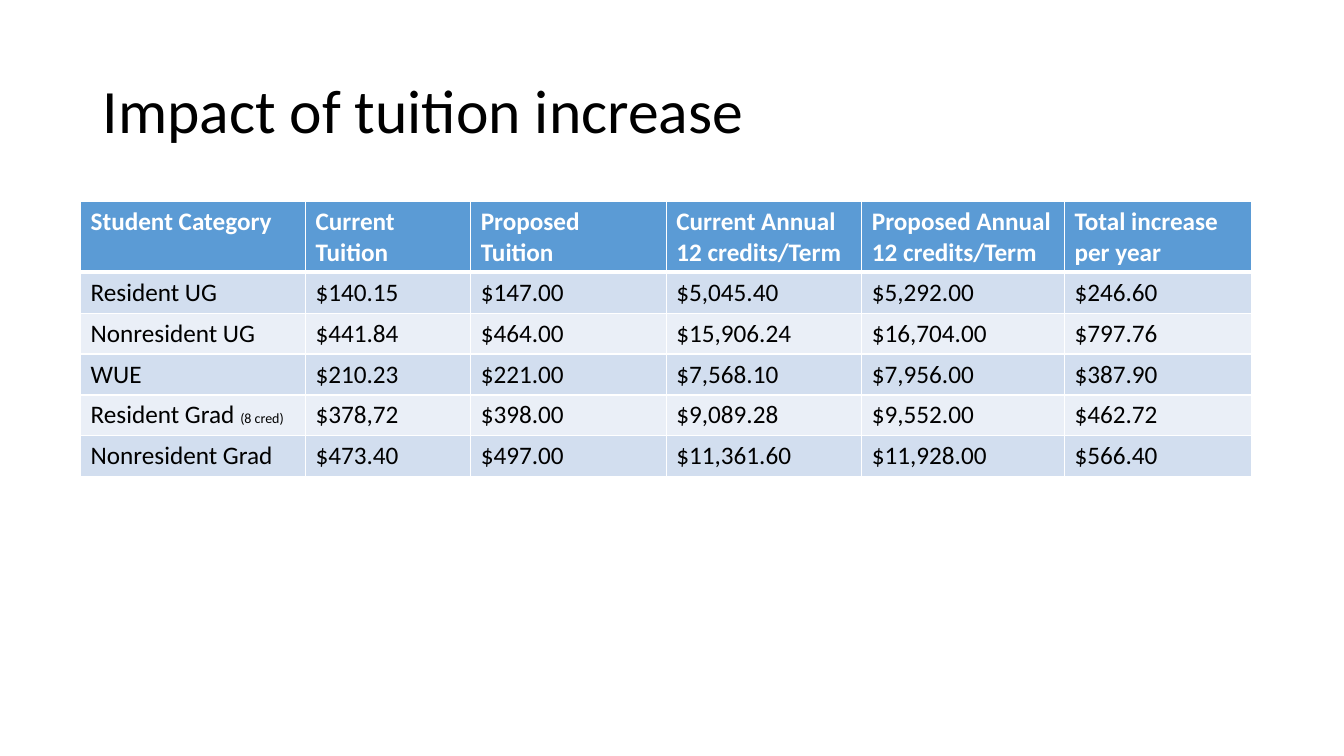
from dataclasses import dataclass

from lxml.etree import SubElement
from pptx import Presentation
from pptx.dml.color import RGBColor
from pptx.enum.text import MSO_ANCHOR
from pptx.oxml.ns import qn
from pptx.table import _Cell
from pptx.text.text import _Paragraph
from pptx.util import Inches, Pt

FONT = "Calibri"
BLACK = RGBColor(0x00, 0x00, 0x00)
WHITE = RGBColor(0xFF, 0xFF, 0xFF)
HEADER_BLUE = RGBColor(0x5B, 0x9B, 0xD5)
BANDS = (RGBColor(0xD2, 0xDE, 0xEF), RGBColor(0xEA, 0xEF, 0xF7))

PAGE_WIDTH = Inches(13.33)
PAGE_HEIGHT = Inches(7.5)
COLUMN_PERCENTS = (16.73, 12.3, 14.55, 14.55, 15.08, 13.95)
HEADER_PERCENT = 9.35
BODY_PERCENT = 5.41
THIN_LINE = Pt(1)
HEADER_LINE = Pt(3)


@dataclass(frozen=True)
class Span:
    text: str
    size: float = 18
    color: RGBColor = BLACK
    bold: bool = False


@dataclass(frozen=True)
class TuitionRow:
    category: tuple[Span, ...]
    amounts: tuple[str, ...]

    def cells(self) -> list[tuple[Span, ...]]:
        return [self.category, *((Span(amount),) for amount in self.amounts)]


HEADINGS = (
    "Student Category",
    "Current Tuition",
    "Proposed Tuition",
    "Current Annual 12 credits/Term",
    "Proposed Annual 12 credits/Term",
    "Total increase per year",
)
TUITION_ROWS = (
    TuitionRow((Span("Resident UG"),),
               ("$140.15", "$147.00", "$5,045.40", "$5,292.00", "$246.60")),
    TuitionRow((Span("Nonresident UG"),),
               ("$441.84", "$464.00", "$15,906.24", "$16,704.00", "$797.76")),
    TuitionRow((Span("WUE"),),
               ("$210.23", "$221.00", "$7,568.10", "$7,956.00", "$387.90")),
    TuitionRow((Span("Resident Grad "), Span("(8 cred)", size=10)),
               ("$378,72", "$398.00", "$9,089.28", "$9,552.00", "$462.72")),
    TuitionRow((Span("Nonresident Grad"),),
               ("$473.40", "$497.00", "$11,361.60", "$11,928.00", "$566.40")),
)


def across(percent: float) -> int:
    return round(PAGE_WIDTH * percent / 100)


def down(percent: float) -> int:
    return round(PAGE_HEIGHT * percent / 100)


def write_spans(paragraph: _Paragraph, spans: tuple[Span, ...]) -> None:
    for span in spans:
        run = paragraph.add_run()
        run.text = span.text
        run.font.name = FONT
        run.font.size = Pt(span.size)
        run.font.bold = span.bold
        run.font.color.rgb = span.color


def draw_borders(cell: _Cell, top: int, bottom: int) -> None:
    properties = cell._tc.get_or_add_tcPr()
    widths = {"a:lnL": THIN_LINE, "a:lnR": THIN_LINE, "a:lnT": top, "a:lnB": bottom}
    for tag, width in widths.items():
        line = SubElement(properties, qn(tag), w=str(width))
        fill = SubElement(line, qn("a:solidFill"))
        SubElement(fill, qn("a:srgbClr"), val=str(WHITE))


def draw_title(page) -> None:
    box = page.shapes.add_textbox(across(6.9), down(5.33), across(86.25), down(19.33))
    frame = box.text_frame
    frame.word_wrap = True
    frame.vertical_anchor = MSO_ANCHOR.MIDDLE
    paragraph = frame.paragraphs[0]
    paragraph.line_spacing = 0.9
    write_spans(paragraph, (Span("Impact of tuition increase", size=44),))


def draw_tuition_table(page) -> None:
    header = [(Span(heading, color=WHITE, bold=True),) for heading in HEADINGS]
    rows = [header, *(row.cells() for row in TUITION_ROWS)]
    height = HEADER_PERCENT + BODY_PERCENT * len(TUITION_ROWS)
    table = page.shapes.add_table(
        len(rows), len(HEADINGS), across(6), down(26.67),
        across(sum(COLUMN_PERCENTS)), down(height),
    ).table
    for column, percent in zip(table.columns, COLUMN_PERCENTS):
        column.width = across(percent)
    for row_index, cells in enumerate(rows):
        is_header = row_index == 0
        table.rows[row_index].height = down(HEADER_PERCENT if is_header else BODY_PERCENT)
        color = HEADER_BLUE if is_header else BANDS[(row_index - 1) % len(BANDS)]
        top = HEADER_LINE if row_index == 1 else THIN_LINE
        bottom = HEADER_LINE if is_header else THIN_LINE
        for column_index, spans in enumerate(cells):
            cell = table.cell(row_index, column_index)
            draw_borders(cell, top, bottom)
            cell.fill.solid()
            cell.fill.fore_color.rgb = color
            write_spans(cell.text_frame.paragraphs[0], spans)


def main() -> None:
    deck = Presentation()
    deck.slide_width = PAGE_WIDTH
    deck.slide_height = PAGE_HEIGHT
    page = deck.slides.add_slide(deck.slide_layouts[6])
    draw_title(page)
    draw_tuition_table(page)
    deck.save("out.pptx")


if __name__ == "__main__":
    main()
